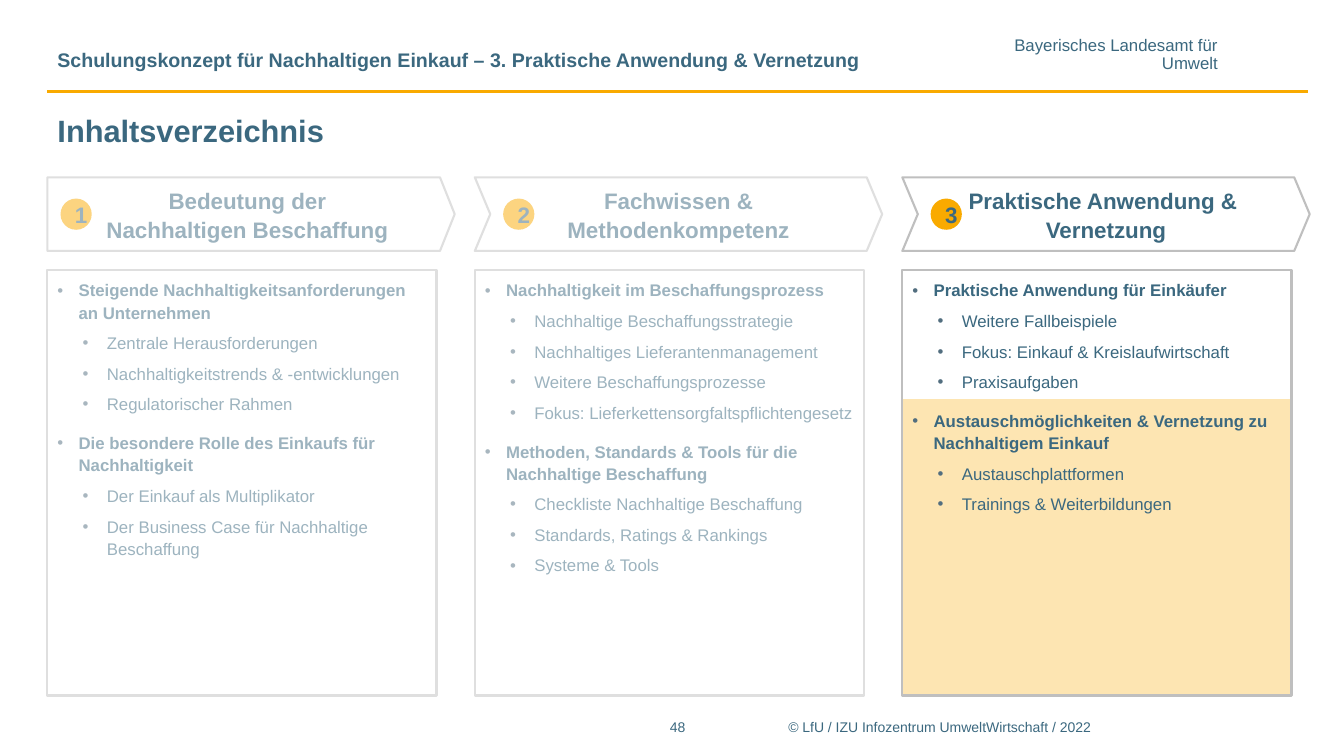
"""Build the table-of-contents slide for the sustainable purchasing training."""
import lxml.etree
import pptx
import pptx.dml.color
import pptx.enum.shapes
import pptx.enum.text
import pptx.oxml.ns
import pptx.util

COLORS = {
    "text": "3B687F",
    "bullet": "526E7F",
    "accent": "F9AA00",
    "outline": "BFBFBF",
    "veil": "FFFFFF",
}
FONT = "Arial"
LEFT, PITCH, CONTENT_WIDTH = 0.47, 4.24, 12.5
ARROW_TOP, ARROW_WIDTH, ARROW_HEIGHT = 1.76, 4.04, 0.73
PANEL_TOP, PANEL_WIDTH, PANEL_HEIGHT = 2.68, 3.86, 4.22
HIGHLIGHT_TOP = 3.96
CIRCLE = 0.31
INDENTS = [(0.21, -0.21), (0.49, -0.24)]

ALIGN = pptx.enum.text.PP_ALIGN
ANCHOR = pptx.enum.text.MSO_ANCHOR
SHAPE = pptx.enum.shapes.MSO_SHAPE

CHAPTERS = [
    ("Bedeutung der\vNachhaltigen Beschaffung", [
        (0, "Steigende Nachhaltigkeitsanforderungen an Unternehmen"),
        (1, "Zentrale Herausforderungen"),
        (1, "Nachhaltigkeitstrends & -entwicklungen"),
        (1, "Regulatorischer Rahmen"),
        (0, "Die besondere Rolle des Einkaufs für Nachhaltigkeit"),
        (1, "Der Einkauf als Multiplikator"),
        (1, "Der Business Case für Nachhaltige Beschaffung"),
    ]),
    ("Fachwissen & Methodenkompetenz", [
        (0, "Nachhaltigkeit im Beschaffungsprozess"),
        (1, "Nachhaltige Beschaffungsstrategie"),
        (1, "Nachhaltiges Lieferantenmanagement"),
        (1, "Weitere Beschaffungsprozesse"),
        (1, "Fokus: Lieferkettensorgfaltspflichtengesetz"),
        (0, "Methoden, Standards & Tools für die Nachhaltige Beschaffung"),
        (1, "Checkliste Nachhaltige Beschaffung"),
        (1, "Standards, Ratings & Rankings"),
        (1, "Systeme & Tools"),
    ]),
    ("Praktische Anwendung & \vVernetzung", [
        (0, "Praktische Anwendung für Einkäufer"),
        (1, "Weitere Fallbeispiele"),
        (1, "Fokus: Einkauf & Kreislaufwirtschaft"),
        (1, "Praxisaufgaben"),
        (0, "Austauschmöglichkeiten & Vernetzung zu Nachhaltigem Einkauf"),
        (1, "Austauschplattformen"),
        (1, "Trainings & Weiterbildungen"),
    ]),
]


def color(name):
    """Return the named palette colour."""
    return pptx.dml.color.RGBColor.from_string(COLORS[name])


def inches(*lengths):
    """Convert lengths in inches to a list of EMU values."""
    return [pptx.util.Inches(length) for length in lengths]


def place(shape, *box):
    """Move a shape to the given left, top, width and height."""
    shape.left, shape.top, shape.width, shape.height = inches(*box)


def set_insets(text_frame, horizontal, vertical):
    """Set equal side insets and equal top and bottom insets."""
    text_frame.margin_left = text_frame.margin_right = pptx.util.Inches(horizontal)
    text_frame.margin_top = text_frame.margin_bottom = pptx.util.Inches(vertical)


def format_paragraph(paragraph, size, bold=False, align=ALIGN.LEFT, spacing=1.0):
    """Apply alignment, line spacing and font to a paragraph."""
    paragraph.alignment = align
    paragraph.line_spacing = spacing
    for run in paragraph.runs:
        run.font.name = FONT
        run.font.size = pptx.util.Pt(size)
        run.font.bold = bold
        run.font.color.rgb = color("text")


def write(shape, text, size, anchor=ANCHOR.TOP, **style):
    """Fill a shape with text in one style."""
    text_frame = shape.text_frame
    text_frame.text = text
    text_frame.word_wrap = True
    text_frame.auto_size = pptx.enum.text.MSO_AUTO_SIZE.NONE
    text_frame.vertical_anchor = anchor
    for paragraph in text_frame.paragraphs:
        format_paragraph(paragraph, size, **style)


def add_label(slide, box, text, size, **style):
    """Add a text box and return it."""
    label = slide.shapes.add_textbox(*inches(*box))
    write(label, text, size, **style)
    return label


def outline(shape):
    """Give a shape a grey outline and no fill."""
    shape.fill.background()
    shape.line.color.rgb = color("outline")
    shape.line.width = pptx.util.Pt(1.5)


def add_filled(slide, kind, box, fill, opacity=100):
    """Add a borderless filled shape with the given opacity in percent."""
    shape = slide.shapes.add_shape(kind, *inches(*box))
    shape.shadow.inherit = False
    shape.fill.solid()
    shape.fill.fore_color.rgb = color(fill)
    shape.line.fill.background()
    if opacity < 100:
        qn = pptx.oxml.ns.qn
        fill_color = shape._element.spPr.find(qn("a:solidFill")).find(qn("a:srgbClr"))
        lxml.etree.SubElement(fill_color, qn("a:alpha"), val=str(opacity * 1000))
    return shape


def add_bullet(paragraph, level):
    """Add a hanging bullet for the given list level."""
    qn = pptx.oxml.ns.qn
    properties = paragraph._p.get_or_add_pPr()
    margin, indent = inches(*INDENTS[level])
    properties.set("marL", str(margin))
    properties.set("indent", str(indent))
    bullet_color = lxml.etree.SubElement(properties, qn("a:buClr"))
    lxml.etree.SubElement(bullet_color, qn("a:srgbClr"), val=COLORS["bullet"])
    lxml.etree.SubElement(properties, qn("a:buFont"), typeface=FONT)
    lxml.etree.SubElement(properties, qn("a:buChar"), char="•")


def fill_panel(panel, left, topics):
    """Turn a body placeholder into an outlined topic list."""
    place(panel, left, PANEL_TOP, PANEL_WIDTH, PANEL_HEIGHT)
    outline(panel)
    write(panel, "\n".join(text for _, text in topics), 12)
    set_insets(panel.text_frame, 0.1, 0.08)
    for number, (paragraph, (level, _)) in enumerate(zip(panel.text_frame.paragraphs, topics)):
        paragraph.level = level
        format_paragraph(paragraph, 12, bold=level == 0, spacing=1.1)
        paragraph.space_before = pptx.util.Pt(0 if number == 0 else 3 if level else 9)
        paragraph.space_after = pptx.util.Pt(3)
        add_bullet(paragraph, level)


def add_chapter_arrow(slide, left, number, heading):
    """Add a chapter arrow with its numbered circle."""
    first = number == 1
    kind = SHAPE.PENTAGON if first else SHAPE.CHEVRON
    arrow = slide.shapes.add_shape(kind, *inches(left, ARROW_TOP, ARROW_WIDTH, ARROW_HEIGHT))
    arrow.shadow.inherit = False
    arrow.adjustments[0] = 0.2 if first else 0.21
    outline(arrow)
    write(arrow, heading, 16, ANCHOR.MIDDLE, bold=True, align=ALIGN.CENTER, spacing=1.06)
    set_insets(arrow.text_frame, 0.04, 0.04)
    circle_left = left + (0.13 if first else 0.28)
    circle_top = ARROW_TOP + (ARROW_HEIGHT - CIRCLE) / 2
    circle = add_filled(slide, SHAPE.OVAL, (circle_left, circle_top, CIRCLE, CIRCLE), "accent")
    write(circle, str(number), 16, ANCHOR.MIDDLE, bold=True, align=ALIGN.CENTER)


def add_frame(slide):
    """Add the header, rule, title and footer."""
    rule = slide.shapes.add_connector(
        pptx.enum.shapes.MSO_CONNECTOR.STRAIGHT, *inches(LEFT, 0.91, LEFT + CONTENT_WIDTH, 0.91))
    rule.line.color.rgb = color("accent")
    rule.line.width = pptx.util.Pt(2)
    lxml.etree.SubElement(rule._element.spPr, pptx.oxml.ns.qn("a:effectLst"))
    add_label(slide, (LEFT, 0.24, 9.24, 0.52),
              "Schulungskonzept für Nachhaltigen Einkauf – 3. Praktische Anwendung & Vernetzung",
              14, anchor=ANCHOR.BOTTOM, bold=True, spacing=0.85)
    publisher = add_label(slide, (10.05, 0.38, 2.03, 0.34),
                          "Bayerisches Landesamt für\nUmwelt", 12, align=ALIGN.RIGHT, spacing=0.85)
    publisher.text_frame.word_wrap = False
    set_insets(publisher.text_frame, 0, 0)
    place(slide.shapes.title, LEFT, 1.02, CONTENT_WIDTH, 0.55)
    write(slide.shapes.title, "Inhaltsverzeichnis", 22, ANCHOR.MIDDLE, bold=True)
    add_label(slide, (6.46, 7.08, 0.52, 0.31), "48", 10, align=ALIGN.CENTER)
    add_label(slide, (7.72, 7.08, 5.36, 0.31),
              "© LfU / IZU Infozentrum UmweltWirtschaft / 2022", 10)


def main():
    """Build and save the slide."""
    presentation = pptx.Presentation()
    presentation.slide_width, presentation.slide_height = inches(13.33, 7.5)
    slide = presentation.slides.add_slide(presentation.slide_layouts.get_by_name("Comparison"))
    add_frame(slide)
    *panels, spare = list(slide.placeholders)[1:]
    spare._element.getparent().remove(spare._element)
    for index, (panel, (heading, topics)) in enumerate(zip(panels, CHAPTERS)):
        left = LEFT + index * PITCH
        fill_panel(panel, left, topics)
        add_chapter_arrow(slide, left, index + 1, heading)
    highlight = add_filled(
        slide, SHAPE.RECTANGLE,
        (left, HIGHLIGHT_TOP, PANEL_WIDTH, PANEL_TOP + PANEL_HEIGHT - HIGHLIGHT_TOP), "accent", 30)
    panels[-1]._element.addprevious(highlight._element)
    add_filled(slide, SHAPE.RECTANGLE, (0.37, 1.7, 8.5, 5.25), "veil", 50)
    presentation.save("out.pptx")


if __name__ == "__main__":
    main()
